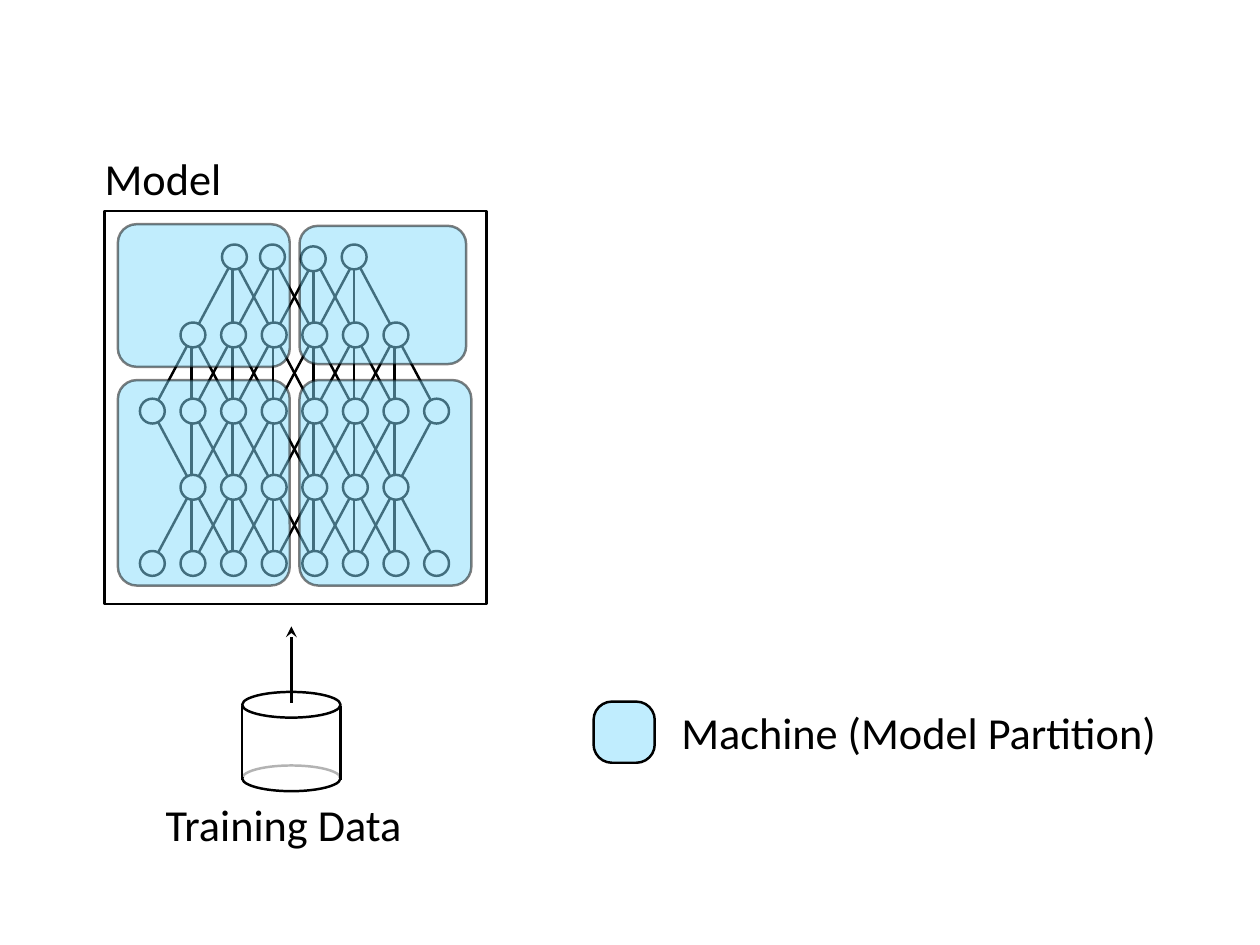
"""Build a slide of a neural network model split over four machines."""
from lxml.etree import SubElement
from pptx import Presentation
from pptx.dml.color import RGBColor
from pptx.enum.shapes import MSO_CONNECTOR as Link, MSO_SHAPE as Kind
from pptx.enum.text import MSO_ANCHOR as Anchor
from pptx.oxml.ns import qn
from pptx.util import Pt

BLACK, WHITE = "000000", "FFFFFF"
MACHINE, LEGEND = "84DDFD", "C0EDFE"
LEFT, TOP = 123.8, 210.3
COLUMN_STEP, ROW_STEP = 33, 61.9
NODE = 20.2
ROW_COLUMNS = [range(2, 6), range(1, 7), range(8), range(1, 7), range(8)]
TOP_ROW_SHIFTS = {2: (0.7, -1.5), 3: (-1.4, -1.5), 4: (-1.2, 0), 5: (-1, -1.5)}


def paint(fill, colour):
    fill.solid()
    fill.fore_color.rgb = RGBColor.from_string(colour)


def add_text(text, left, top, width, height=49, size=36, font="Calibri", colour=BLACK):
    box = slide.shapes.add_textbox(Pt(left), Pt(top), Pt(width), Pt(height))
    frame = box.text_frame
    frame.word_wrap = True
    frame.vertical_anchor = Anchor.MIDDLE
    frame.margin_left = frame.margin_right = frame.margin_top = frame.margin_bottom = 0
    span = frame.paragraphs[0].add_run()
    span.text = text
    span.font.size = Pt(size)
    span.font.name = font
    paint(span.font.fill, colour)


deck = Presentation()
deck.slide_width, deck.slide_height = Pt(1024), Pt(768)
slide = deck.slides.add_slide(deck.slide_layouts[6])

parts = []
for narrow, wide in [(0, 1), (1, 2), (3, 2), (3, 4)]:
    start, end = TOP + narrow * ROW_STEP, TOP + wide * ROW_STEP
    trim = 6 if end > start else -6
    for column in ROW_COLUMNS[narrow]:
        x = LEFT + column * COLUMN_STEP
        parts += [
            (Link.STRAIGHT, (x, start, x - COLUMN_STEP, end), {}),
            (Link.STRAIGHT, (x - 1, start + trim, x - 1, end - trim), {}),
            (Link.STRAIGHT, (x, start, x + COLUMN_STEP, end), {}),
        ]

for row, columns in enumerate(ROW_COLUMNS):
    for column in columns:
        shift_x, shift_y = TOP_ROW_SHIFTS[column] if row == 0 else (0, 0)
        left = LEFT + column * COLUMN_STEP + shift_x - NODE / 2
        top = TOP + row * ROW_STEP + shift_y - NODE / 2
        parts.append((Kind.OVAL, (left, top, NODE, NODE), {"fill": WHITE}))

for place, corner in [
    ((95.8, 182.2, 139.7, 115.9), 0.13),
    ((243.4, 183.6, 135.4, 112.3), 0.13),
    ((95.8, 308.9, 139.7, 167), 0.11),
    ((243.4, 308.9, 139.7, 167), 0.11),
]:
    parts.append((Kind.ROUNDED_RECTANGLE, place, {"fill": MACHINE, "opacity": 50, "corner": corner}))

parts += [
    (Kind.RECTANGLE, (85, 171.4, 310.3, 319.7), {}),
    (Kind.OVAL, (196.8, 622.1, 80, 20.9), {}),
    (Kind.RECTANGLE, (196.8, 575.3, 80, 56.2), {"fill": WHITE, "opacity": 70, "line": None}),
    (Kind.OVAL, (196.8, 562.3, 80, 20.9), {}),
    (Link.STRAIGHT, (196.8, 573.8, 196.8, 634.3), {}),
    (Link.STRAIGHT, (276.8, 573.8, 276.8, 634.3), {}),
    (Link.STRAIGHT, (236.8, 571, 236.8, 509), {"weight": 3, "arrow": "stealth"}),
    (Kind.ROUNDED_RECTANGLE, (482.4, 570.2, 49.7, 49.7), {"fill": LEGEND, "corner": 0.3}),
]

for kind, place, style in parts:
    lengths = [Pt(length) for length in place]
    is_link = kind is Link.STRAIGHT
    if is_link:
        part = slide.shapes.add_connector(kind, *lengths)
    else:
        part = slide.shapes.add_shape(kind, *lengths)
        if "fill" in style:
            paint(part.fill, style["fill"])
        else:
            part.fill.background()
        if "corner" in style:
            part.adjustments[0] = style["corner"]

    line_colour = style.get("line", BLACK)
    if line_colour:
        paint(part.line.fill, line_colour)
        part.line.width = Pt(style.get("weight", 2))
    else:
        part.line.fill.background()

    properties = part.element.spPr
    if "arrow" in style:
        SubElement(properties.find(qn("a:ln")), qn("a:tailEnd"), type=style["arrow"])
    if "opacity" in style:
        for colour in list(properties.iter(qn("a:srgbClr"))):
            SubElement(colour, qn("a:alpha"), val=str(style["opacity"] * 1000))
    if is_link:
        SubElement(properties, qn("a:effectLst"))
    else:
        part.shadow.inherit = False

add_text("Model", 85, 120.2, 101)
add_text("Training Data", 134.6, 645.1, 203)
add_text("Machine (Model Partition)", 553.7, 570.2, 395)

deck.save("out.pptx")
